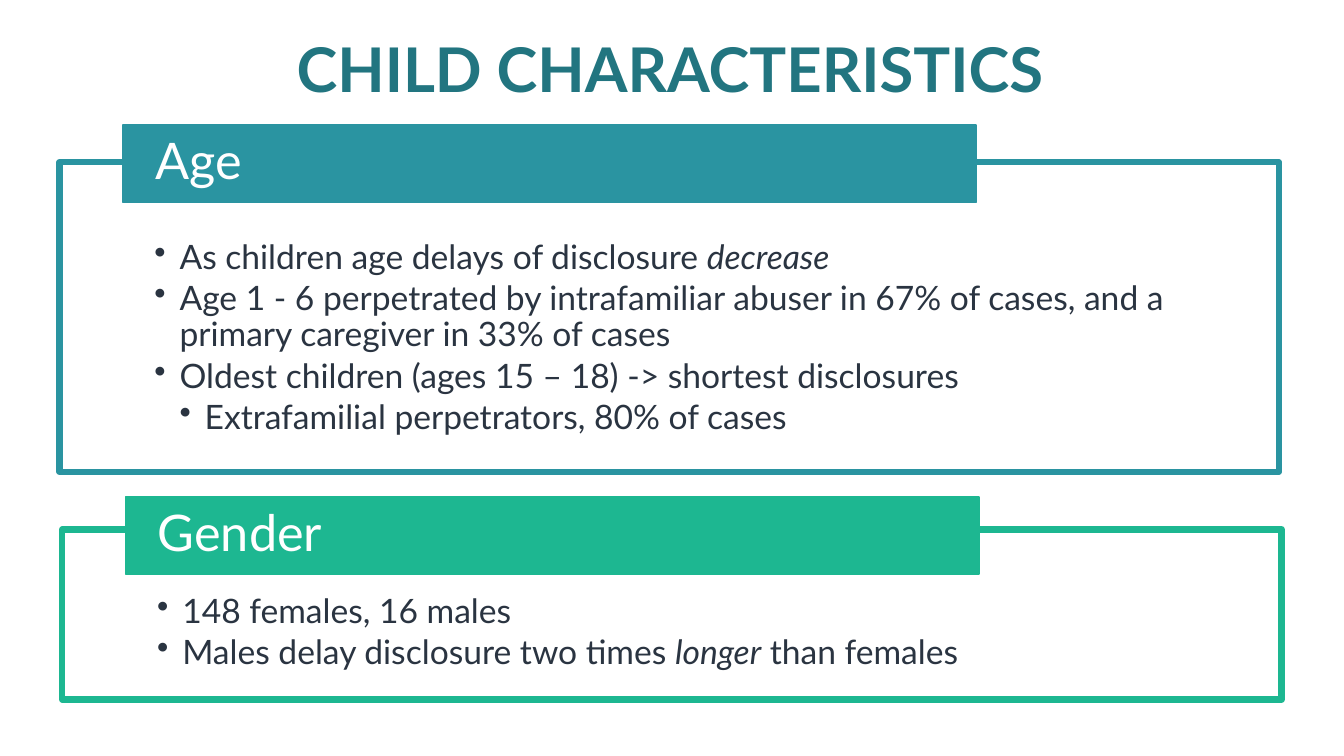
from lxml.etree import SubElement
from pptx import Presentation
from pptx.dml.color import RGBColor
from pptx.enum.shapes import MSO_SHAPE
from pptx.enum.text import MSO_ANCHOR, PP_ALIGN
from pptx.oxml.ns import qn
from pptx.util import Cm, Pt

TITLE = RGBColor(0x22, 0x75, 0x80)
TEAL = RGBColor(0x2A, 0x94, 0xA1)
GREEN = RGBColor(0x1D, 0xB7, 0x91)
INK = RGBColor(0x2A, 0x34, 0x41)
WHITE = RGBColor(0xFF, 0xFF, 0xFF)

AGE = [
    (1, ["As children age delays of disclosure ", "decrease"]),
    (1, ["Age 1 - 6 perpetrated by intrafamiliar abuser in 67% of cases, "
         "and a primary caregiver in 33% of cases"]),
    (1, ["Oldest children (ages 15 – 18) -> shortest disclosures"]),
    (2, ["Extrafamilial perpetrators, 80% of cases"]),
]
GENDER = [
    (1, ["148 females, 16 males"]),
    (1, ["Males delay disclosure two times ", "longer", " than females"]),
]


def style(para, size, color, after=0):
    para.line_spacing = 0.9
    para.space_after = Pt(after)
    font = para.font
    font.name = "Lato"
    font.size = Pt(size)
    font.color.rgb = color


def add_rect(slide, box, fill, line, width, insets, anchor):
    rect = slide.shapes.add_shape(MSO_SHAPE.RECTANGLE, *map(Cm, box))
    rect.shadow.inherit = False
    rect.fill.solid()
    rect.fill.fore_color.rgb = fill
    rect.line.color.rgb = line
    rect.line.width = Pt(width)
    frame = rect.text_frame
    frame.word_wrap = True
    frame.vertical_anchor = anchor
    side, top, bottom = map(Cm, insets)
    frame.margin_left = frame.margin_right = side
    frame.margin_top, frame.margin_bottom = top, bottom
    return frame


def add_bullet(para, level, parts):
    para.level = level
    para.alignment = PP_ALIGN.LEFT
    props = para._p.get_or_add_pPr()
    props.set("marL", str(Cm(0.635 * level)))
    props.set("indent", str(-Cm(0.635)))
    SubElement(props, qn("a:buChar"), char="•")
    style(para, 24, INK, 3.6)
    for index, part in enumerate(parts):
        run = para.add_run()
        run.text = part
        if index == 1:
            run.font.italic = True


def add_title(slide, box):
    title = slide.shapes.title
    title.left, title.top, title.width, title.height = map(Cm, box)
    frame = title.text_frame
    frame.text = "CHILD CHARACTERISTICS"
    frame.vertical_anchor = MSO_ANCHOR.MIDDLE
    para = frame.paragraphs[0]
    para.alignment = PP_ALIGN.CENTER
    style(para, 44, TITLE)
    para.font.bold = True


def add_panel(slide, box, color, head, items, lift, inset):
    left, top, width, height = box
    body = add_rect(slide, box, WHITE, color, 4.5,
                    (2.39, inset, 0.48), MSO_ANCHOR.TOP)
    for index, (level, parts) in enumerate(items):
        para = body.add_paragraph() if index else body.paragraphs[0]
        add_bullet(para, level, parts)

    tab = add_rect(slide, (left + 1.6, top - lift, 21.5, 1.95), color, color, 1,
                   (0.81, 0, 0), MSO_ANCHOR.MIDDLE)
    para = tab.paragraphs[0]
    para.text = head
    para.alignment = PP_ALIGN.LEFT
    style(para, 36, WHITE)


def main():
    deck = Presentation()
    deck.slide_width, deck.slide_height = Cm(33.87), Cm(19.05)
    slide = deck.slides.add_slide(deck.slide_layouts[5])
    add_title(slide, (2.29, 0, 29.21, 3.68))
    add_panel(slide, (1.5, 4.09, 30.73, 7.8), TEAL, "Age", AGE, 0.94, 1.96)
    add_panel(slide, (1.57, 13.34, 30.73, 4.29), GREEN, "Gender", GENDER, 0.82, 1.63)
    deck.save("out.pptx")


if __name__ == "__main__":
    main()
